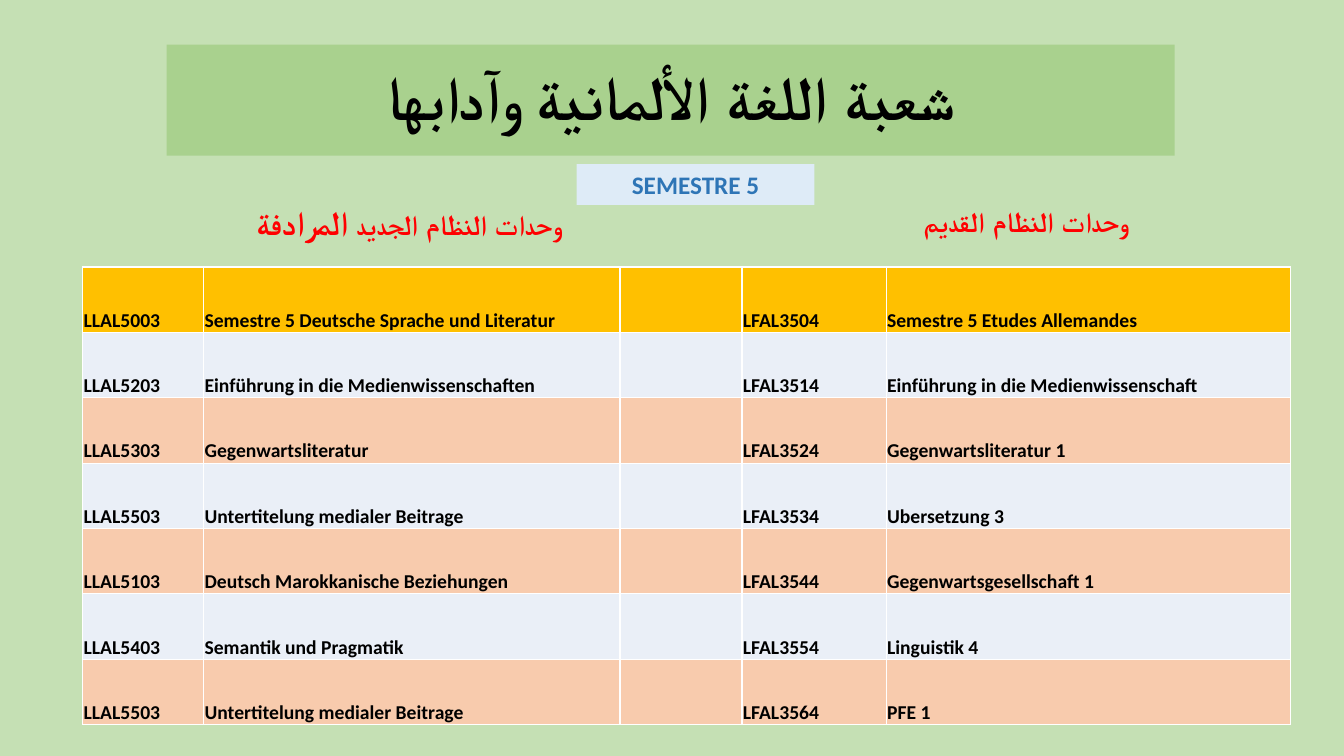
import pptx
import pptx.util
import pptx.dml.color
import pptx.enum.shapes
import pptx.enum.text
import pptx.oxml
import pptx.oxml.ns

WIDTH, HEIGHT = 13.33, 7.5
FONT = "Calibri"
COLORS = {
    "page": "C5E0B4", "banner": "A9D18E", "badge": "DEEBF7", "badge_text": "2E75B6",
    "heading": "FF0000", "text": "000000", "border": "FFFFFF",
    "head_row": "FFC000", "odd_row": "EAEFF7", "even_row": "F8CBAD",
}
COLUMNS = [1.2, 4.13, 1.21, 1.43, 4.01]
MODULES = [
    ("LLAL5003", "Semestre 5 Deutsche Sprache und Literatur", "", "LFAL3504", "Semestre 5 Etudes Allemandes"),
    ("LLAL5203", "Einführung in die Medienwissenschaften", "", "LFAL3514", "Einführung in die Medienwissenschaft"),
    ("LLAL5303", "Gegenwartsliteratur", "", "LFAL3524", "Gegenwartsliteratur 1"),
    ("LLAL5503", "Untertitelung medialer Beitrage", "", "LFAL3534", "Ubersetzung 3"),
    ("LLAL5103", "Deutsch Marokkanische Beziehungen", "", "LFAL3544", "Gegenwartsgesellschaft 1"),
    ("LLAL5403", "Semantik und Pragmatik", "", "LFAL3554", "Linguistik 4"),
    ("LLAL5503", "Untertitelung medialer Beitrage", "", "LFAL3564", "PFE 1"),
]


def rgb(name):
    """Return the named colour."""
    return pptx.dml.color.RGBColor.from_string(COLORS[name])


def emu(box):
    """Convert a box in inches to slide lengths."""
    return [pptx.util.Inches(v) for v in box]


def paint(target, name):
    """Fill a shape, cell or background with a solid colour."""
    target.fill.solid()
    target.fill.fore_color.rgb = rgb(name)


def add_run(p, text, size, color):
    """Add one bold run to a paragraph."""
    r = p.add_run()
    r.text = text
    r.font.name = FONT
    r.font.size = pptx.util.Pt(size)
    r.font.bold = True
    r.font.color.rgb = rgb(color)


def write_centered(sp, runs, color, rtl):
    """Write one centred paragraph of (text, size) runs in a shape."""
    tf = sp.text_frame
    tf.word_wrap = True
    p = tf.paragraphs[0]
    p.alignment = pptx.enum.text.PP_ALIGN.CENTER
    if rtl:
        p._p.get_or_add_pPr().set("rtl", "1")
    for text, size in runs:
        add_run(p, text, size, color)
    return p


def add_panel(s, box, fill, runs, color, rtl=False):
    """Add a filled rectangle with centred text."""
    sp = s.shapes.add_shape(pptx.enum.shapes.MSO_SHAPE.RECTANGLE, *emu(box))
    sp.shadow.inherit = False
    sp.line.fill.background()
    paint(sp, fill)
    sp.text_frame.vertical_anchor = pptx.enum.text.MSO_ANCHOR.MIDDLE
    return write_centered(sp, runs, color, rtl)


def add_heading(s, box, runs):
    """Add a red right-to-left column heading."""
    sp = s.shapes.add_textbox(*emu(box))
    write_centered(sp, runs, "heading", True)


def add_borders(cell):
    """Draw a thin line on all four sides of a cell."""
    tc_pr = cell._tc.get_or_add_tcPr()
    for side in ("lnL", "lnR", "lnT", "lnB"):
        tc_pr.append(pptx.oxml.parse_xml(
            f'<a:{side} {pptx.oxml.ns.nsdecls("a")} w="12700"><a:solidFill>'
            f'<a:srgbClr val="{COLORS["border"]}"/></a:solidFill></a:{side}>'))


def fill_cell(cell, text, fill):
    """Style one table cell and write its text at the bottom."""
    add_borders(cell)
    paint(cell, fill)
    cell.vertical_anchor = pptx.enum.text.MSO_ANCHOR.BOTTOM
    cell.margin_left = cell.margin_right = cell.margin_top = pptx.util.Inches(0.01)
    cell.margin_bottom = 0
    if text:
        add_run(cell.text_frame.paragraphs[0], text, 14, "text")


def add_modules(s, box):
    """Add the table that matches new modules to old ones."""
    table = s.shapes.add_table(len(MODULES), len(COLUMNS), *emu(box)).table
    for column, share in zip(table.columns, COLUMNS):
        column.width = pptx.util.Inches(box[2] * share / sum(COLUMNS))
    for i, module in enumerate(MODULES):
        table.rows[i].height = pptx.util.Inches(box[3] / len(MODULES))
        fill = "head_row" if i == 0 else "odd_row" if i % 2 else "even_row"
        for j, text in enumerate(module):
            fill_cell(table.cell(i, j), text, fill)


def build_slide(prs, box):
    """Build the semester slide inside the given box."""
    s = prs.slides.add_slide(prs.slide_layouts[6])
    paint(s.background, "page")
    x, y, w, h = box

    def place(left, top, width, height):
        """Turn shares of the box into inches."""
        return x + left * w, y + top * h, width * w, height * h

    p = add_panel(s, place(0.124, 0.059, 0.75, 0.147), "banner",
                  [("شعبة اللغة الألمانية وآدابها", 44)], "text", True)
    p.line_spacing = 0.9
    add_heading(s, place(0.137, 0.26, 0.335, 0.067),
                [("وحدات النظام الجديد ", 20), ("المرادفة", 24)])
    add_heading(s, place(0.596, 0.264, 0.335, 0.059), [("وحدات النظام القديم", 20)])
    add_panel(s, place(0.429, 0.217, 0.177, 0.054), "badge", [("SEMESTRE 5", 18)], "badge_text")
    add_modules(s, place(0.0615, 0.3533, 0.8987, 0.6053))


def main():
    """Create and save the presentation."""
    prs = pptx.Presentation()
    prs.slide_width = pptx.util.Inches(WIDTH)
    prs.slide_height = pptx.util.Inches(HEIGHT)
    build_slide(prs, (0, 0, WIDTH, HEIGHT))
    prs.save("out.pptx")


if __name__ == "__main__":
    main()
